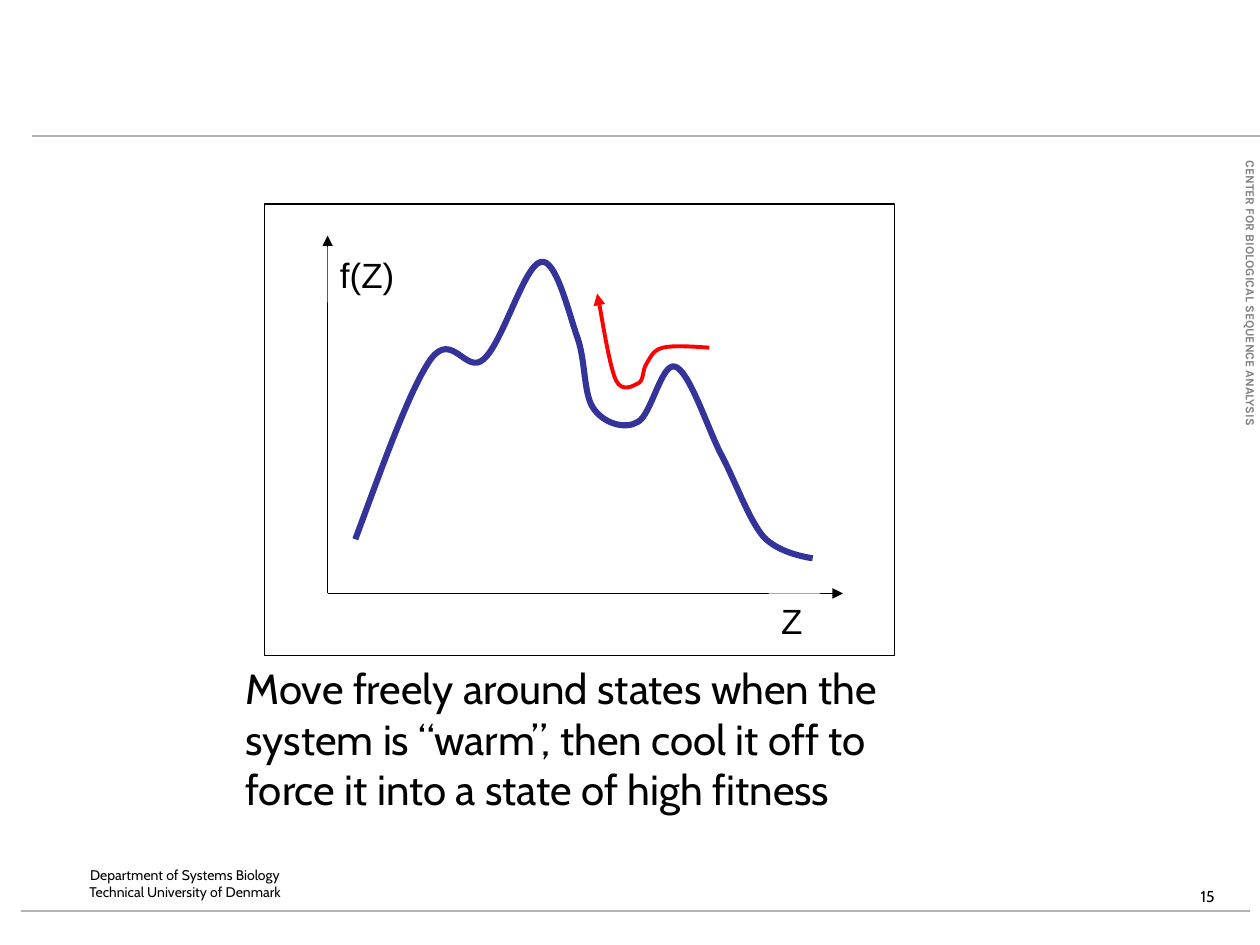
import pptx
import pptx.dml.color
import pptx.enum.shapes
import pptx.enum.text
import pptx.oxml
import pptx.oxml.ns
import pptx.util
from pptx.util import Inches

COLORS = {
    "black": "000000",
    "white": "FFFFFF",
    "rule": "B2B2B2",
    "center": "808080",
    "landscape": "333399",
    "walk": "FF0000",
}

# Each curve is a start point followed by two control points and an end per segment.
LANDSCAPE = [
    (2.82, 4.28),
    (3.04, 3.69), (3.25, 3.09), (3.42, 2.85),
    (3.59, 2.62), (3.7, 2.98), (3.84, 2.85),
    (3.99, 2.72), (4.16, 2.11), (4.29, 2.08),
    (4.41, 2.04), (4.51, 2.47), (4.58, 2.67),
    (4.65, 2.86), (4.63, 3.13), (4.71, 3.24),
    (4.79, 3.36), (4.96, 3.41), (5.06, 3.35),
    (5.17, 3.3), (5.25, 2.87), (5.36, 2.91),
    (5.47, 2.95), (5.6, 3.35), (5.71, 3.58),
    (5.83, 3.8), (5.94, 4.12), (6.06, 4.26),
    (6.19, 4.4), (6.45, 4.43), (6.45, 4.43),
]
WALK = [
    (5.63, 2.76),
    (5.49, 2.75), (5.34, 2.74), (5.26, 2.76),
    (5.18, 2.78), (5.16, 2.84), (5.13, 2.89),
    (5.1, 2.93), (5.11, 3.02), (5.07, 3.04),
    (5.03, 3.06), (4.94, 3.12), (4.89, 3.02),
    (4.84, 2.92), (4.78, 2.54), (4.76, 2.43),
    (4.73, 2.31), (4.74, 2.33), (4.74, 2.33),
]


def rgb(color):
    return pptx.dml.color.RGBColor.from_string(COLORS[color])


def a_element(tag, **attributes):
    element = pptx.oxml.parse_xml(f"<a:{tag} {pptx.oxml.ns.nsdecls('a')}/>")
    for name, value in attributes.items():
        element.set(name, value)
    return element


def style_line(line, color, width, arrow=False):
    line.color.rgb = rgb(color)
    line.width = pptx.util.Pt(width)
    if arrow:
        line.color  # the outline element exists once it has a colour
        line._get_or_add_ln().append(a_element("tailEnd", type="triangle"))


def add_line(shapes, start, end, color, width, arrow=False):
    connector = shapes.add_connector(
        pptx.enum.shapes.MSO_CONNECTOR.STRAIGHT,
        *(Inches(value) for value in (*start, *end)))
    style_line(connector.line, color, width, arrow)
    connector._element.spPr.append(a_element("effectLst"))


def add_curve(shapes, points, color, width, arrow=False):
    """Draw a cubic curve, turning each three freeform points into one segment."""
    places = [(Inches(x), Inches(y)) for x, y in points]
    builder = shapes.build_freeform(*places[0])
    builder.add_line_segments(places[1:], close=False)
    curve = builder.convert_to_shape()
    steps = curve._element.xpath(".//a:path/a:lnTo")
    for first in range(0, len(steps), 3):
        segment = a_element("cubicBezTo")
        steps[first].addprevious(segment)
        for step in steps[first:first + 3]:
            segment.append(step[0])
            step.getparent().remove(step)
    curve.shadow.inherit = False
    curve.fill.background()
    style_line(curve.line, color, width, arrow)


def add_text(shapes, text, box, size, font="Cabin", color="black", bold=False,
             align="LEFT", fill=None, wrap=True, insets=(0.1, 0.05), rotation=0):
    textbox = shapes.add_textbox(*(Inches(value) for value in box))
    textbox.rotation = rotation
    if fill:
        textbox.fill.solid()
        textbox.fill.fore_color.rgb = rgb(fill)
    frame = textbox.text_frame
    frame.word_wrap = wrap
    frame.margin_left = frame.margin_right = Inches(insets[0])
    frame.margin_top = frame.margin_bottom = Inches(insets[1])
    frame.text = text
    for paragraph in frame.paragraphs:
        paragraph.alignment = getattr(pptx.enum.text.PP_ALIGN, align)
        for run in paragraph.runs:
            run.font.name = font
            run.font.size = pptx.util.Pt(size)
            run.font.bold = bold
            run.font.color.rgb = rgb(color)


def add_frame(shapes, box):
    frame = shapes.add_shape(
        pptx.enum.shapes.MSO_SHAPE.RECTANGLE, *(Inches(value) for value in box))
    frame.shadow.inherit = False
    frame.fill.solid()
    frame.fill.fore_color.rgb = rgb("white")
    style_line(frame.line, "black", 0.75)


def add_page_furniture(shapes):
    add_line(shapes, (0.25, 1.08), (10, 1.08), "rule", 1.5)
    add_line(shapes, (0.17, 7.23), (9.92, 7.23), "rule", 1.5)
    add_text(shapes, "CENTER FOR BIOLOGICAL SEQUENCE ANALYSIS",
             (8.38, 2.72, 3.09, 0.14), 7, font="Karla", color="center",
             bold=True, insets=(0.03, 0.01), rotation=90)
    add_text(shapes, "Department of Systems Biology\nTechnical University of Denmark",
             (0.42, 6.83, 2.1, 0.5), 8, align="CENTER")
    add_text(shapes, "15", (9.43, 6.99, 0.39, 0.25), 9, wrap=False)


def add_fitness_plot(shapes):
    add_frame(shapes, (2.1, 1.62, 5, 3.58))
    origin = (2.6, 4.71)
    for axis_end in ((2.6, 1.87), (6.69, 4.71)):
        add_line(shapes, origin, axis_end, "black", 0.75, arrow=True)
    add_text(shapes, "Z", (6.1, 4.71, 0.41, 0.44), 20, font="Arial", fill="white")
    add_text(shapes, "f(Z)", (2.6, 1.96, 0.67, 0.44), 20, font="Arial", fill="white")
    add_curve(shapes, LANDSCAPE, "landscape", 3.5)


def main():
    presentation = pptx.Presentation()
    presentation.slide_width = Inches(10)
    presentation.slide_height = Inches(7.5)
    blank_layout = presentation.slide_layouts[6]
    shapes = presentation.slides.add_slide(blank_layout).shapes

    add_page_furniture(shapes)
    add_fitness_plot(shapes.add_group_shape().shapes)
    add_text(shapes, "Move freely around states when the system is “warm”, then cool "
             "it off to force it into a state of high fitness",
             (1.85, 5.21, 5.75, 1.31), 24, fill="white")
    add_curve(shapes, WALK, "walk", 2.25, arrow=True)
    presentation.save("out.pptx")


if __name__ == "__main__":
    main()
